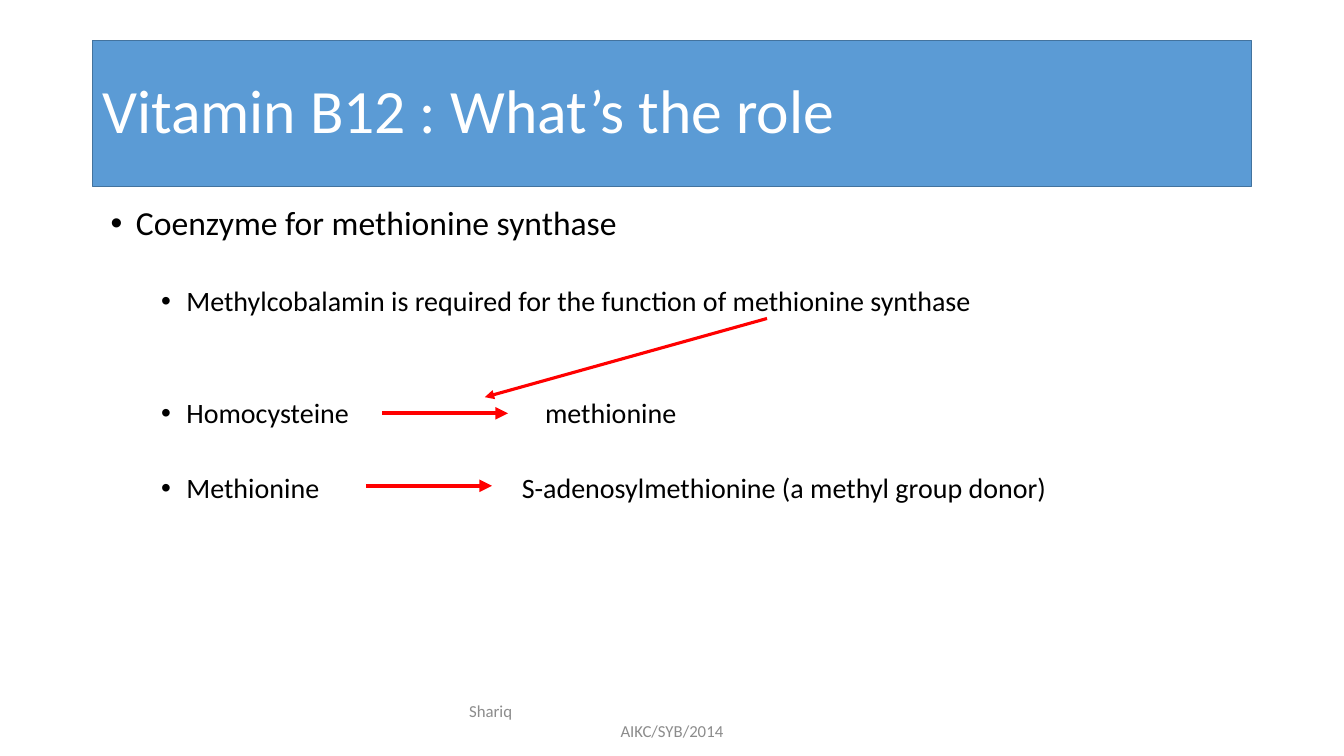
import pptx
import pptx.util
import pptx.dml.color
import pptx.enum.shapes
import pptx.enum.text
import pptx.oxml.ns
import lxml.etree

Pt = pptx.util.Pt
ALIGN = pptx.enum.text.PP_ALIGN
ANCHOR = pptx.enum.text.MSO_ANCHOR
FONT = "Calibri"
BLACK, WHITE, GREY, RED = "000000", "FFFFFF", "8C8C8C", "FF0000"
BLUE, DARK_BLUE = "5B9BD5", "43739E"

TITLE = "Vitamin B12 : What’s the role"
# text, size, left margin, space before
BULLETS = [
    ("Coenzyme for methionine synthase", 24, 54, 5),
    ("Methylcobalamin is required for the function of methionine synthase", 20, 90, 31.75),
    ("Homocysteine", 20, 90, 58.5),
    ("Methionine", 20, 90, 31.75),
]
# text, left, top
PRODUCTS = [
    ("methionine", 389.3, 285),
    ("S-adenosylmethionine (a methyl group donor)", 372.7, 338.5),
]
FOOTER = [("Shariq", ALIGN.LEFT, 10), ("AIKC/SYB/2014", ALIGN.CENTER, 0)]
# start, end, width
ARROWS = [
    ((272.9, 295.2), (362.9, 295.2), 3),
    ((547.9, 227.5), (346.3, 283.7), 2.25),
    ((261.4, 347), (351.4, 347), 3),
]


def rgb(code):
    return pptx.dml.color.RGBColor.from_string(code)


def text_box(left, top, width, height, anchor=ANCHOR.TOP):
    tf = s.shapes.add_textbox(Pt(left), Pt(top), Pt(width), Pt(height)).text_frame
    tf.word_wrap = True
    tf.vertical_anchor = anchor
    return tf


def write(tf, text, size, color=BLACK, align=ALIGN.LEFT, spacing=0.9, before=0,
          margin=0, bullet=False):
    """Fill the first empty paragraph of the frame, or add one."""
    p = tf.add_paragraph() if tf.text else tf.paragraphs[0]
    p.alignment = align
    p.line_spacing = spacing
    p.space_before = Pt(before)
    pPr = p._p.get_or_add_pPr()
    pPr.set("marL", str(Pt(margin)))
    if bullet:
        pPr.set("indent", str(Pt(-18)))
        for tag, key, value in (("a:buFont", "typeface", "Arial"), ("a:buChar", "char", "•")):
            lxml.etree.SubElement(pPr, pptx.oxml.ns.qn(tag)).set(key, value)
    r = p.add_run()
    r.text = text
    r.font.name = FONT
    r.font.size = Pt(size)
    r.font.color.rgb = rgb(color)


def arrow(start, end, width):
    c = s.shapes.add_connector(pptx.enum.shapes.MSO_CONNECTOR.STRAIGHT,
                               *(Pt(v) for v in start + end))
    c.line.color.rgb = rgb(RED)
    c.line.width = Pt(width)
    tail = lxml.etree.SubElement(c.line._get_or_add_ln(), pptx.oxml.ns.qn("a:tailEnd"))
    tail.set("type", "triangle")
    lxml.etree.SubElement(c._element.spPr, pptx.oxml.ns.qn("a:effectLst"))


prs = pptx.Presentation()
prs.slide_width, prs.slide_height = Pt(960), Pt(540)
s = prs.slides.add_slide(prs.slide_layouts[6])

banner = s.shapes.add_shape(pptx.enum.shapes.MSO_SHAPE.RECTANGLE,
                            Pt(66), Pt(28.75), Pt(828), Pt(104.4))
banner.shadow.inherit = False
banner.fill.solid()
banner.fill.fore_color.rgb = rgb(BLUE)
banner.line.color.rgb = rgb(DARK_BLUE)
banner.line.width = Pt(1)
banner.text_frame.word_wrap = True
banner.text_frame.vertical_anchor = ANCHOR.MIDDLE
write(banner.text_frame, TITLE, 44, WHITE)

footer = text_box(318, 500.5, 324, 28.75, ANCHOR.MIDDLE)
for text, align, margin in FOOTER:
    write(footer, text, 12, GREY, align=align, spacing=1.0, margin=margin)

body = text_box(36, 144, 877, 346.3)
for text, size, margin, before in BULLETS:
    write(body, text, size, before=before, margin=margin, bullet=True)

for text, left, top in PRODUCTS:
    product = text_box(left, top, 400, 24)
    product.margin_left = product.margin_top = product.margin_bottom = 0
    write(product, text, 20)

for start, end, width in ARROWS:
    arrow(start, end, width)

prs.save("out.pptx")
